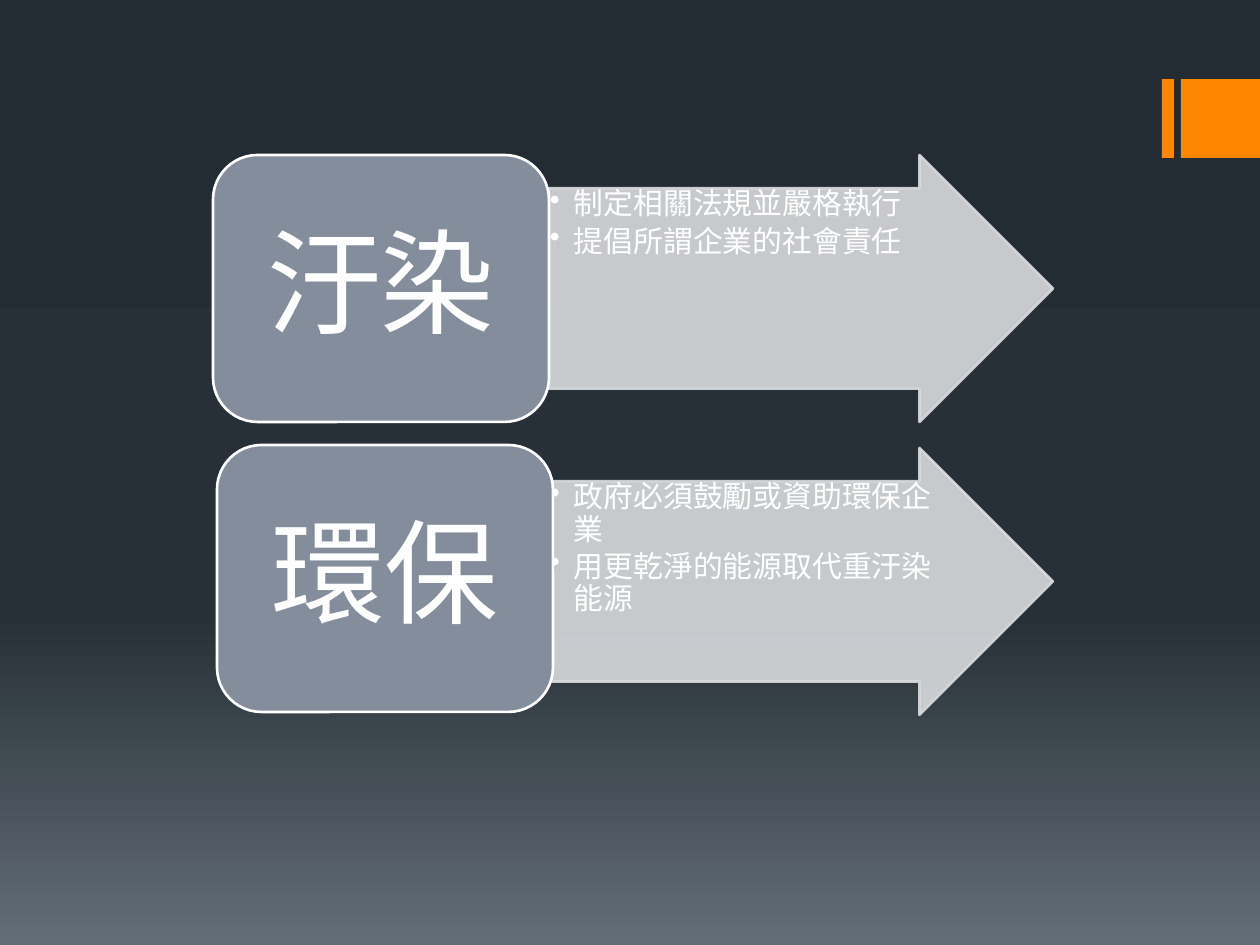
import copy

import pptx
import pptx.dml.color
import pptx.enum.shapes
import pptx.enum.text
import pptx.oxml
import pptx.oxml.ns
import pptx.util

RGB = pptx.dml.color.RGBColor
SHAPE = pptx.enum.shapes.MSO_SHAPE
ALIGN = pptx.enum.text.PP_ALIGN
ANCHOR = pptx.enum.text.MSO_ANCHOR
qn = pptx.oxml.ns.qn

ORANGE = RGB(0xFF, 0x86, 0x00)
SLATE = RGB(0x83, 0x8D, 0x9B)
PALE = RGB(0xD9, 0xDB, 0xDE)
WHITE = RGB(0xFF, 0xFF, 0xFF)
BACKGROUND = [(0, RGB(0x24, 0x2C, 0x33)), (0.65, RGB(0x27, 0x30, 0x37)),
              (1, RGB(0x63, 0x6D, 0x76))]

TOPICS = [
    {"title": "汙染", "box_at": (213, 155), "arrow_at": (549, 155),
     "points": ["制定相關法規並嚴格執行", "提倡所謂企業的社會責任"]},
    {"title": "環保", "box_at": (217, 445), "arrow_at": (549, 448),
     "points": ["政府必須鼓勵或資助環保企業", "用更乾淨的能源取代重汙染能源"]},
]
BOX_SIZE = (336, 267)
ARROW_SIZE = (504, 267)
ACCENT_BARS = [(1162, 79, 12, 79), (1181, 79, 79, 79)]


def px(n):
    return round(n * 914400 / 126)


def set_background(slide, stops):
    fill = slide.background.fill
    fill.gradient()
    fill.gradient_angle = 270
    gs_list = next(slide.element.iter(qn("a:gsLst")))
    gs_list.insert(1, copy.deepcopy(gs_list[0]))
    for stop, (position, color) in zip(fill.gradient_stops, stops):
        stop.position = position
        stop.color.rgb = color


def add_shape(slide, kind, box, fill, line=None, opacity=None):
    sp = slide.shapes.add_shape(kind, *map(px, box))
    sp.shadow.inherit = False
    sp.fill.solid()
    sp.fill.fore_color.rgb = fill
    if line is None:
        sp.line.fill.background()
    else:
        sp.line.color.rgb = line
        sp.line.width = pptx.util.Pt(1.5)
    if opacity is not None:
        for color in sp._element.spPr.iter(qn("a:srgbClr")):
            alpha = pptx.oxml.parse_xml(
                f'<a:alpha {pptx.oxml.ns.nsdecls("a")} val="{opacity * 1000}"/>')
            color.append(alpha)
    return sp


def add_bullet(p, indent):
    pPr = p._p.get_or_add_pPr()
    pPr.set("marL", str(px(indent)))
    pPr.set("indent", str(-px(indent)))
    pPr.append(pptx.oxml.parse_xml(
        f'<a:buChar {pptx.oxml.ns.nsdecls("a")} char="•"/>'))


def write(sp, lines, size, space_after, margins, align, anchor, indent=0):
    """Fill a shape with paragraphs; a positive indent makes them bulleted."""
    tf = sp.text_frame
    tf.word_wrap = True
    tf.vertical_anchor = anchor
    tf.margin_left = tf.margin_right = px(margins[0])
    tf.margin_top = tf.margin_bottom = px(margins[1])
    for i, line in enumerate(lines):
        p = tf.paragraphs[0] if i == 0 else tf.add_paragraph()
        if indent:
            p.level = 1
            add_bullet(p, indent)
        p.alignment = align
        p.line_spacing = 0.9
        p.space_after = pptx.util.Pt(space_after)
        r = p.add_run()
        r.text = line
        r.font.name = "Arial"
        r.font.size = pptx.util.Pt(size)
        r.font.color.rgb = WHITE


def main():
    prs = pptx.Presentation()
    prs.slide_width, prs.slide_height = px(1260), px(945)
    slide = prs.slides.add_slide(prs.slide_layouts[6])
    set_background(slide, BACKGROUND)

    for bar in ACCENT_BARS:
        add_shape(slide, SHAPE.RECTANGLE, bar, ORANGE)

    for topic in TOPICS:
        arrow = add_shape(slide, SHAPE.RIGHT_ARROW, topic["arrow_at"] + ARROW_SIZE,
                          PALE, line=PALE, opacity=90)
        arrow.adjustments[0] = 0.75
        arrow.adjustments[1] = 0.5
        write(arrow, topic["points"], size=17, space_after=2.8, margins=(1, 1),
              align=ALIGN.LEFT, anchor=ANCHOR.TOP, indent=24)

        box = add_shape(slide, SHAPE.ROUNDED_RECTANGLE, topic["box_at"] + BOX_SIZE,
                        SLATE, line=WHITE)
        write(box, [topic["title"]], size=65, space_after=25, margins=(34, 17),
              align=ALIGN.CENTER, anchor=ANCHOR.MIDDLE)

    prs.save("out.pptx")


if __name__ == "__main__":
    main()
